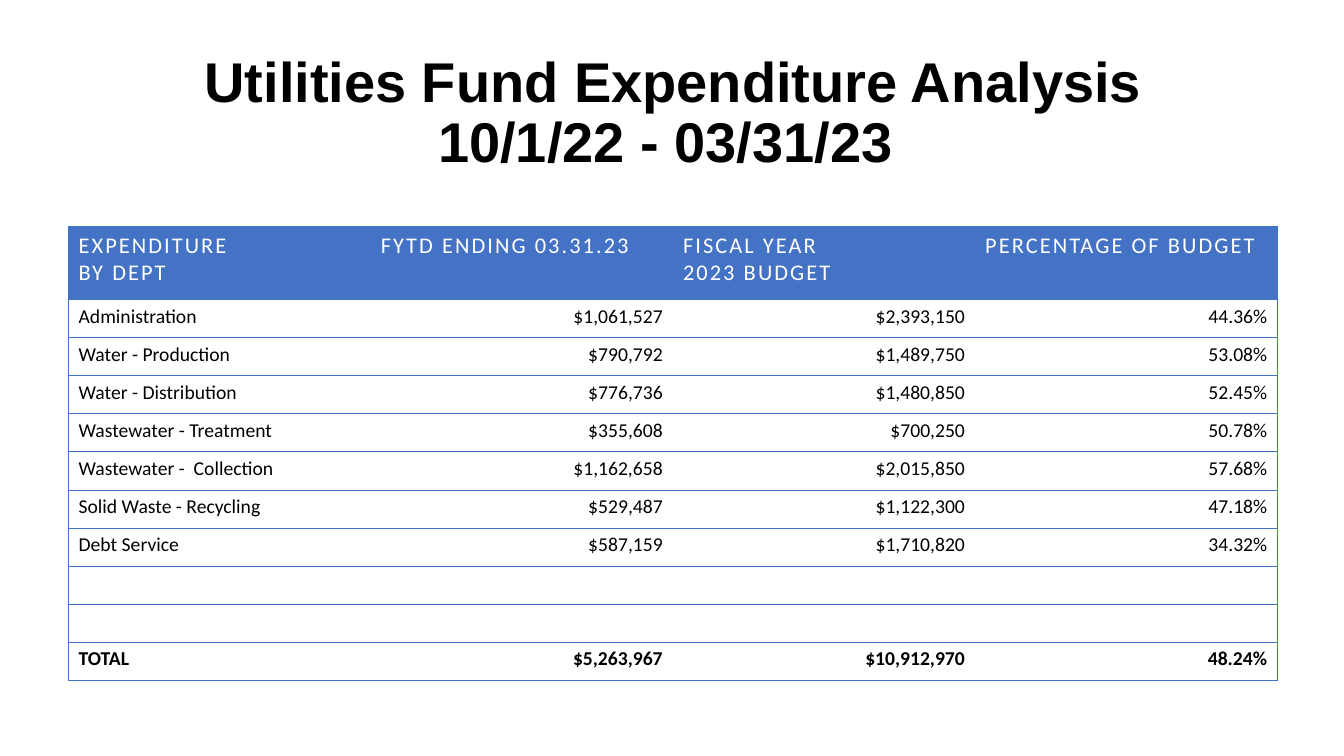
from lxml import etree
from pptx import Presentation
from pptx.dml.color import RGBColor
from pptx.enum.text import MSO_ANCHOR, PP_ALIGN
from pptx.oxml.ns import qn
from pptx.util import Inches, Pt

BLUE = RGBColor(0x44, 0x72, 0xC4)
WHITE = RGBColor(0xFF, 0xFF, 0xFF)
BLACK = RGBColor(0, 0, 0)
LEFT, CENTER, RIGHT = PP_ALIGN.LEFT, PP_ALIGN.CENTER, PP_ALIGN.RIGHT
MIDDLE = MSO_ANCHOR.MIDDLE

TITLE = {"name": "Arial", "size": Pt(40), "bold": True}
HEAD = {"name": "Calibri", "size": Pt(16), "bold": False}
BODY = {"name": "Calibri", "size": Pt(14), "bold": False}
TOTAL = {**BODY, "bold": True}

X, WIDTH = 0.68, 11.99
HIGH, HEAD_HIGH = 4.5, 0.72
ROWS = [
    ["EXPENDITURE\nBY DEPT", "FYTD ENDING 03.31.23", "FISCAL YEAR\n2023 BUDGET", "PERCENTAGE OF BUDGET"],
    ["Administration", "$1,061,527", "$2,393,150", "44.36%"],
    ["Water - Production", "$790,792", "$1,489,750", "53.08%"],
    ["Water - Distribution", "$776,736", "$1,480,850", "52.45%"],
    ["Wastewater - Treatment", "$355,608", "$700,250", "50.78%"],
    ["Wastewater -  Collection", "$1,162,658", "$2,015,850", "57.68%"],
    ["Solid Waste - Recycling", "$529,487", "$1,122,300", "47.18%"],
    ["Debt Service", "$587,159", "$1,710,820", "34.32%"],
    ["", "", "", ""],
    ["", "", "", ""],
    ["TOTAL", "$5,263,967", "$10,912,970", "48.24%"],
]


def style(frame, font, color, align, track=0):
    """Format every paragraph and run of a text frame."""
    for para in frame.paragraphs:
        para.alignment = align
        for run in para.runs:
            for key, value in font.items():
                setattr(run.font, key, value)
            run.font.color.rgb = color
            run.font._element.set("spc", str(track))
        if not para.runs:
            end = etree.SubElement(para._p, qn("a:endParaRPr"))
            end.set("sz", str(int(font["size"].pt * 100)))


def edge(cell, sides):
    """Draw thin blue borders on the named sides of a cell."""
    props = cell._tc.get_or_add_tcPr()
    for side in "LRTB":
        line = etree.SubElement(props, qn(f"a:ln{side}"))
        if side in sides:
            line.set("w", str(Pt(0.5)))
            fill = etree.SubElement(line, qn("a:solidFill"))
            etree.SubElement(fill, qn("a:srgbClr")).set("val", str(BLUE))
        else:
            line.set("w", "0")
            etree.SubElement(line, qn("a:noFill"))


def add_title(slide, text):
    """Add the centred two-line title."""
    box = slide.shapes.add_textbox(Inches(X), Inches(0.33), Inches(WIDTH), Inches(1.61))
    frame = box.text_frame
    frame.word_wrap = True
    frame.vertical_anchor = MIDDLE
    frame.text = text
    frame.paragraphs[0].line_spacing = 0.9
    style(frame, TITLE, BLACK, CENTER)


def add_grid(slide, rows):
    """Add the table of expenditure by department."""
    count, wide = len(rows), len(rows[0])
    table = slide.shapes.add_table(
        count, wide, Inches(X), Inches(2.25), Inches(WIDTH), Inches(HIGH)
    ).table
    for col in table.columns:
        col.width = Inches(WIDTH / wide)
    for r, row in enumerate(rows):
        high = (HIGH - HEAD_HIGH) / (count - 1) if r else HEAD_HIGH
        table.rows[r].height = Inches(high)
        font = HEAD if r == 0 else TOTAL if r == count - 1 else BODY
        for c, text in enumerate(row):
            cell = table.cell(r, c)
            cell.text = text
            align = RIGHT if r and c else LEFT
            style(cell.text_frame, font, BLACK if r else WHITE, align, 0 if r else 150)
            edge(cell, "TB" + ("L" if c == 0 else "") + ("R" if c == wide - 1 else ""))
            if r:
                cell.fill.background()
            else:
                cell.fill.solid()
                cell.fill.fore_color.rgb = BLUE


def main():
    """Build the slide and save it."""
    deck = Presentation()
    deck.slide_width, deck.slide_height = Inches(13.33), Inches(7.5)
    slide = deck.slides.add_slide(deck.slide_layouts[6])
    add_title(slide, "Utilities Fund Expenditure Analysis\v10/1/22 - 03/31/23 ")
    add_grid(slide, ROWS)
    deck.save("out.pptx")


if __name__ == "__main__":
    main()
